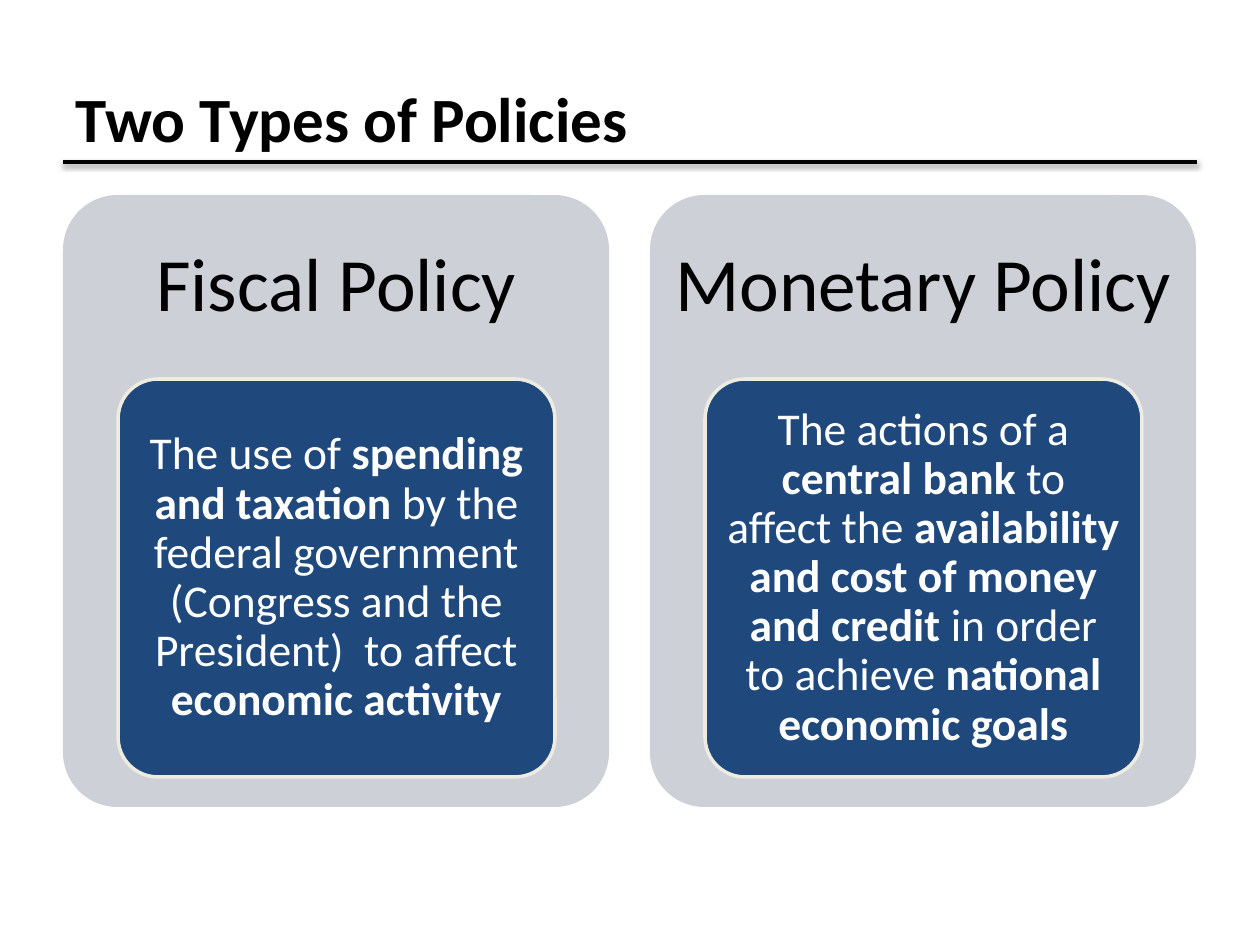
from lxml.etree import SubElement
from pptx import Presentation
from pptx.dml.color import RGBColor
from pptx.enum.shapes import MSO_CONNECTOR, MSO_SHAPE
from pptx.enum.text import MSO_ANCHOR, PP_ALIGN
from pptx.oxml.ns import qn
from pptx.util import Emu, Pt

PX_PER_INCH = 126
BLACK, WHITE, PANEL, NAVY, CREAM = "000000", "FFFFFF", "CDD0D7", "1F497D", "EEECE1"


def px(length):
    return Emu(round(length * 914400 / PX_PER_INCH))


def color(value):
    return RGBColor.from_string(value)


class SlideBuilder:
    font_name = "Calibri"
    corner = 0.1

    def __init__(self, presentation):
        self.slide = presentation.slides.add_slide(presentation.slide_layouts[5])

    def add_text(self, shape, runs, size, text_color, align, insets):
        """Fill a shape with one paragraph of (text, bold) runs."""
        frame = shape.text_frame
        horizontal, vertical = map(px, insets)
        settings = {
            "word_wrap": True, "vertical_anchor": MSO_ANCHOR.MIDDLE,
            "margin_left": horizontal, "margin_right": horizontal,
            "margin_top": vertical, "margin_bottom": vertical,
        }
        for name, value in settings.items():
            setattr(frame, name, value)
        paragraph = frame.paragraphs[0]
        paragraph.alignment = align
        for text, bold in runs:
            run = paragraph.add_run()
            run.text = text
            font_format = {"name": self.font_name, "size": Pt(size), "bold": bold}
            for name, value in font_format.items():
                setattr(run.font, name, value)
            run.font.color.rgb = color(text_color)
        return paragraph

    def title(self, text, box):
        shape = self.slide.shapes.title
        for name, value in zip(("left", "top", "width", "height"), box):
            setattr(shape, name, px(value))
        self.add_text(shape, [(text, True)], 36, BLACK, PP_ALIGN.LEFT, (13, 6))

    def rule(self, left, right, y):
        line = self.slide.shapes.add_connector(
            MSO_CONNECTOR.STRAIGHT, px(left), px(y), px(right), px(y))
        line.line.color.rgb = color(BLACK)
        line.line.width = Pt(2)
        # Soft shadow straight below the line
        effects = SubElement(line._element.spPr, qn("a:effectLst"))
        shadow = SubElement(effects, qn("a:outerShdw"), blurRad=str(Pt(3.1)),
                            dist=str(Pt(1.6)), dir="5400000", rotWithShape="0")
        shade = SubElement(shadow, qn("a:srgbClr"), val=BLACK)
        SubElement(shade, qn("a:alpha"), val="38000")

    def rounded_box(self, box, fill, border=None):
        shape = self.slide.shapes.add_shape(MSO_SHAPE.ROUNDED_RECTANGLE, *map(px, box))
        shape.adjustments[0] = self.corner
        shape.shadow.inherit = False
        shape.fill.solid()
        shape.fill.fore_color.rgb = color(fill)
        if border:
            shape.line.color.rgb = color(border)
            shape.line.width = Pt(2)
        else:
            shape.line.fill.background()
        return shape

    def heading(self, text, box):
        shape = self.slide.shapes.add_textbox(*map(px, box))
        paragraph = self.add_text(shape, [(text, False)], 43, BLACK, PP_ALIGN.CENTER, (23, 23))
        paragraph.line_spacing = 0.9

    def policy(self, left, name, definition):
        """Panel with a heading on top and the definition in an inner box."""
        self.rounded_box((left, 195, 546, 612), PANEL)
        self.heading(name, (left, 195, 546, 184))
        inner = self.rounded_box((left + 55, 379, 437, 398), NAVY, CREAM)
        paragraph = self.add_text(inner, definition, 26, WHITE, PP_ALIGN.CENTER, (9, 6))
        paragraph.line_spacing = 0.9


POLICIES = [
    ("Fiscal Policy", [
        ("The use of ", False),
        ("spending and taxation ", True),
        ("by the federal government (Congress and the President)  to affect ", False),
        ("economic activity", True),
    ]),
    ("Monetary Policy", [
        ("The actions of a ", False),
        ("central bank ", True),
        ("to affect the ", False),
        ("availability and cost of money and credit ", True),
        ("in order to achieve ", False),
        ("national economic goals", True),
    ]),
]


def main():
    presentation = Presentation()
    presentation.slide_width, presentation.slide_height = px(1260), px(945)
    builder = SlideBuilder(presentation)

    # Title and rule
    builder.rule(63, 1197, 162)
    builder.title("Two Types of Policies", (63, 38, 1134, 158))

    # Two policy panels side by side
    for index, (name, definition) in enumerate(POLICIES):
        builder.policy(63 + index * 587, name, definition)

    presentation.save("out.pptx")


if __name__ == "__main__":
    main()
